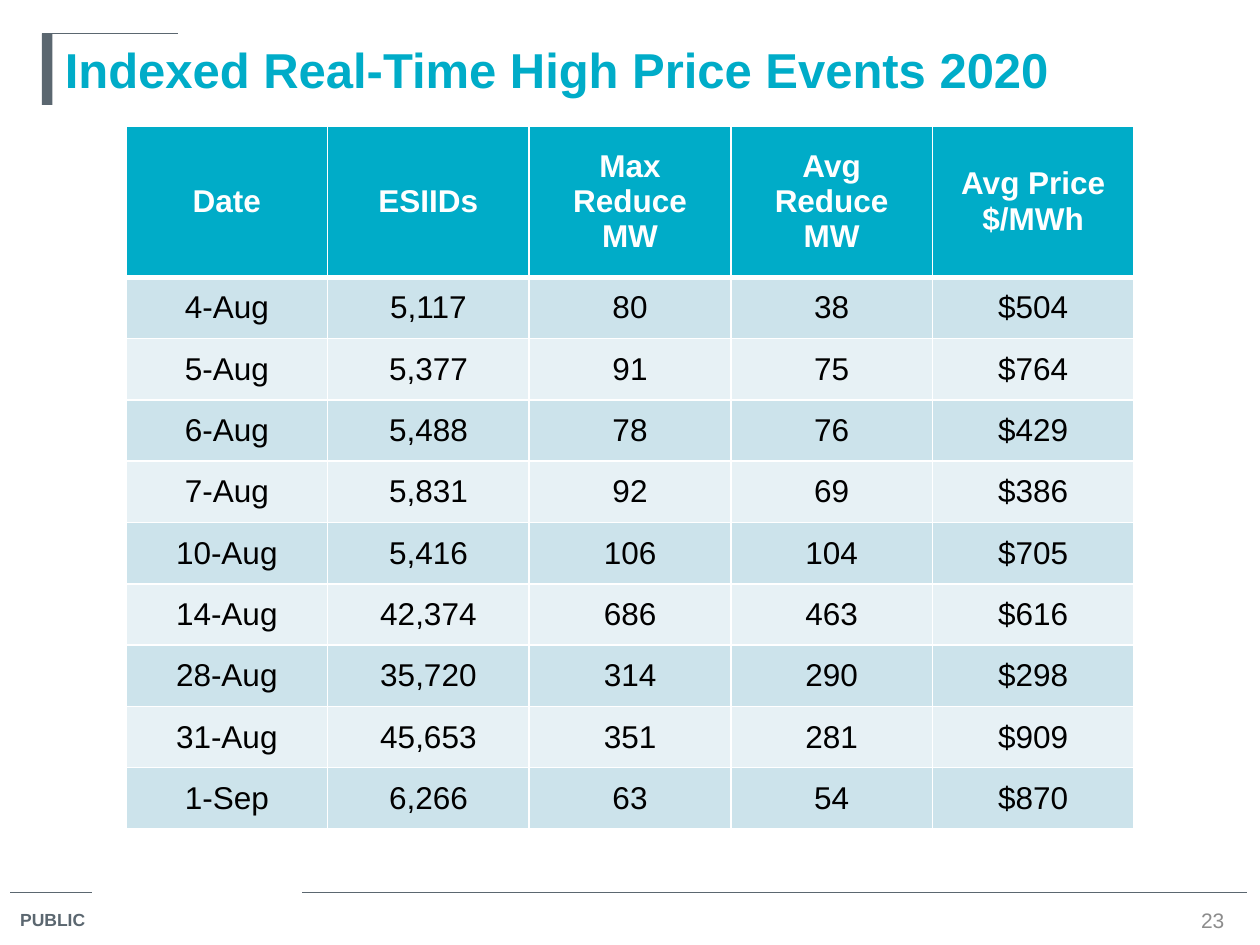
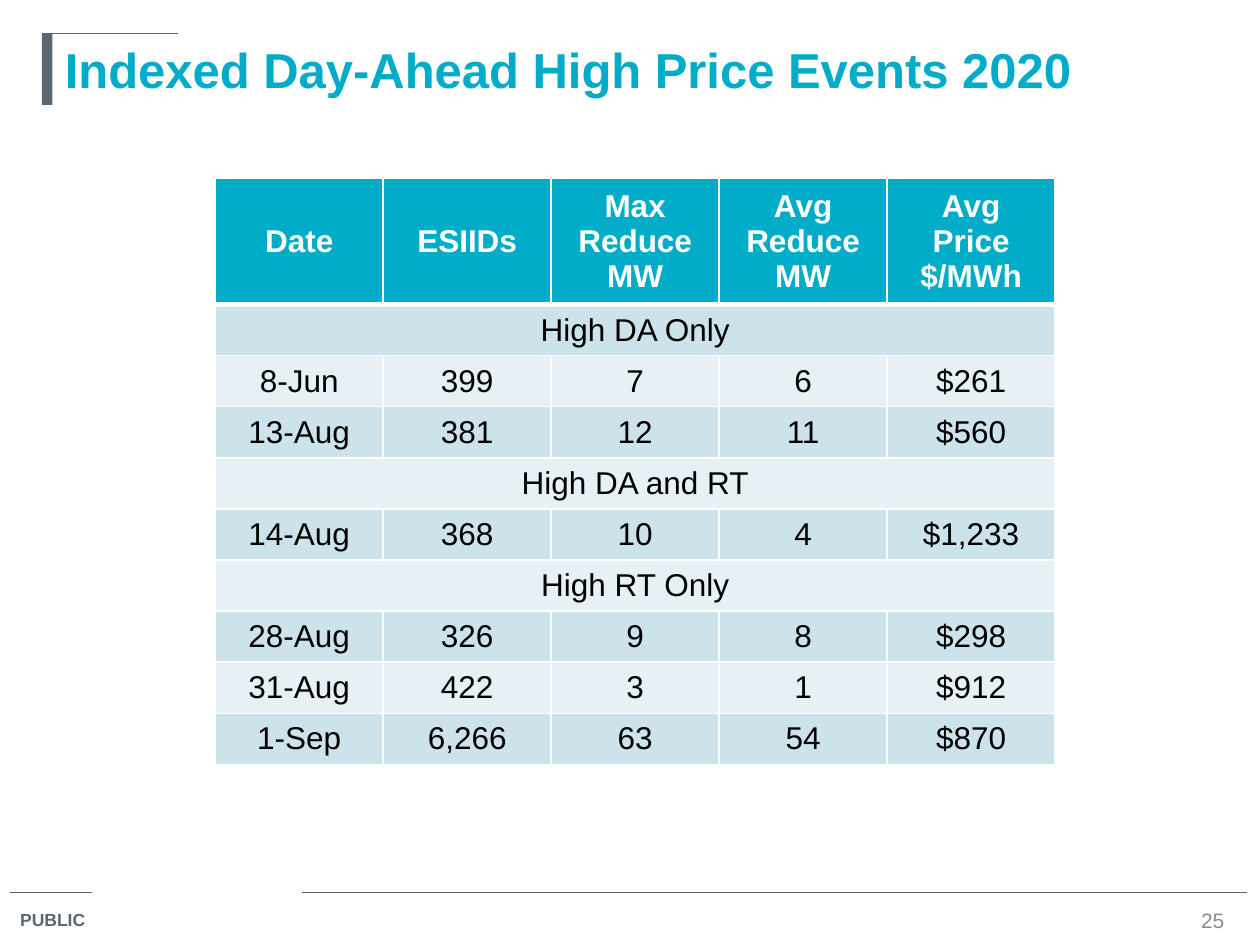
from lxml import etree
from pptx import Presentation
from pptx.dml.color import RGBColor
from pptx.enum.shapes import MSO_CONNECTOR, MSO_SHAPE
from pptx.enum.text import MSO_ANCHOR, PP_ALIGN
from pptx.oxml.ns import qn
from pptx.util import Inches, Pt

STRAIGHT = MSO_CONNECTOR.STRAIGHT
RECT = MSO_SHAPE.RECTANGLE
TOP, MIDDLE = MSO_ANCHOR.TOP, MSO_ANCHOR.MIDDLE
LEFT, CENTER = PP_ALIGN.LEFT, PP_ALIGN.CENTER

COLORS = {
    "accent": "00ACC8", "slate": "5B6770", "number": "8C8C8C",
    "dark_band": "CCE3EB", "light_band": "E7F1F5",
    "white": "FFFFFF", "black": "000000",
}
RGB = {name: RGBColor.from_string(value) for name, value in COLORS.items()}

prs = Presentation()
prs.slide_width, prs.slide_height = Inches(10), Inches(7.5)
GRID = prs.slide_width / 120


def grid(*lengths):
    return [round(length * GRID) for length in lengths]


def write(tf, text, size, color, bold=False, align=LEFT, anchor=TOP):
    tf.word_wrap = True
    tf.vertical_anchor = anchor
    p = tf.paragraphs[0]
    p.text = text
    p.alignment = align
    p.font.name = "Arial"
    p.font.size = Pt(size)
    p.font.bold = bold
    p.font.color.rgb = RGB[color]


RULES = [(1, 85, 8.75, 85), (28.8, 85, 118.8, 85), (4, 3.2, 17, 3.2)]
HEADER = ["Date", "ESIIDs", "Max Reduce MW", "Avg Reduce MW", "Avg Price $/MWh"]
SLIDES = [
    {
        "title": "Indexed Real-Time High Price Events 2020",
        "number": "23",
        "left": 12, "top": 12, "col": 19.2, "header": 14.4, "row": 5.84,
        "rows": [
            ["4-Aug", "5,117", "80", "38", "$504"],
            ["5-Aug", "5,377", "91", "75", "$764"],
            ["6-Aug", "5,488", "78", "76", "$429"],
            ["7-Aug", "5,831", "92", "69", "$386"],
            ["10-Aug", "5,416", "106", "104", "$705"],
            ["14-Aug", "42,374", "686", "463", "$616"],
            ["28-Aug", "35,720", "314", "290", "$298"],
            ["31-Aug", "45,653", "351", "281", "$909"],
            ["1-Sep", "6,266", "63", "54", "$870"],
        ],
    },
    {
        "title": "Indexed Day-Ahead High Price Events 2020",
        "number": "25",
        "left": 20.5, "top": 17, "col": 16, "header": 11.2, "row": 4.87,
        "rows": [
            ["High DA Only"],
            ["8-Jun", "399", "7", "6", "$261"],
            ["13-Aug", "381", "12", "11", "$560"],
            ["High DA and RT"],
            ["14-Aug", "368", "10", "4", "$1,233"],
            ["High RT Only"],
            ["28-Aug", "326", "9", "8", "$298"],
            ["31-Aug", "422", "3", "1", "$912"],
            ["1-Sep", "6,266", "63", "54", "$870"],
        ],
    },
]

for spec_data in SLIDES:
    s = prs.slides.add_slide(prs.slide_layouts[6])

    for rule in RULES:
        line = s.shapes.add_connector(STRAIGHT, *grid(*rule))
        line.line.color.rgb = RGB["slate"]
        line.line.width = Pt(0.75)
        etree.SubElement(line._element.spPr, qn("a:effectLst"))

    bar = s.shapes.add_shape(RECT, *grid(4, 3.2, 1, 6.8))
    bar.shadow.inherit = False
    bar.fill.solid()
    bar.fill.fore_color.rgb = RGB["slate"]
    bar.line.fill.background()

    public = s.shapes.add_textbox(*grid(0.75, 86, 9.25, 3.35))
    write(public.text_frame, "PUBLIC", 10, "slate", bold=True)
    title = s.shapes.add_textbox(*grid(5, 3.2, 111, 6.8))
    write(title.text_frame, spec_data["title"], 28, "accent", bold=True)
    number = s.shapes.add_textbox(*grid(112, 86.15, 7, 2.9))
    write(number.text_frame, spec_data["number"], 12, "number", align=CENTER, anchor=MIDDLE)

    rows = [HEADER] + spec_data["rows"]
    heights = [spec_data["header"]] + [spec_data["row"]] * len(spec_data["rows"])
    frame = s.shapes.add_table(
        len(rows), len(HEADER),
        *grid(spec_data["left"], spec_data["top"], spec_data["col"] * len(HEADER), sum(heights)))
    table = frame.table
    table.horz_banding = False
    for column in table.columns:
        column.width = grid(spec_data["col"])[0]

    for i, values in enumerate(rows):
        table.rows[i].height = grid(heights[i])[0]
        fill = "accent" if i == 0 else "dark_band" if i % 2 else "light_band"
        for j in range(len(HEADER)):
            cell = table.cell(i, j)
            tcPr = cell._tc.get_or_add_tcPr()
            for side in "LRTB":
                thick = (i, side) in [(0, "B"), (1, "T")]
                ln = etree.SubElement(tcPr, qn("a:ln" + side), w=str(Pt(3 if thick else 1)))
                solid = etree.SubElement(ln, qn("a:solidFill"))
                etree.SubElement(solid, qn("a:srgbClr"), val=COLORS["white"])
            cell.fill.solid()
            cell.fill.fore_color.rgb = RGB[fill]
        if len(values) == 1:
            table.cell(i, 0).merge(table.cell(i, len(HEADER) - 1))
        for j, value in enumerate(values):
            cell = table.cell(i, j)
            cell.vertical_anchor = MIDDLE
            write(cell.text_frame, value, 18, "black" if i else "white",
                  bold=i == 0, align=CENTER, anchor=MIDDLE)

prs.save("out.pptx")
